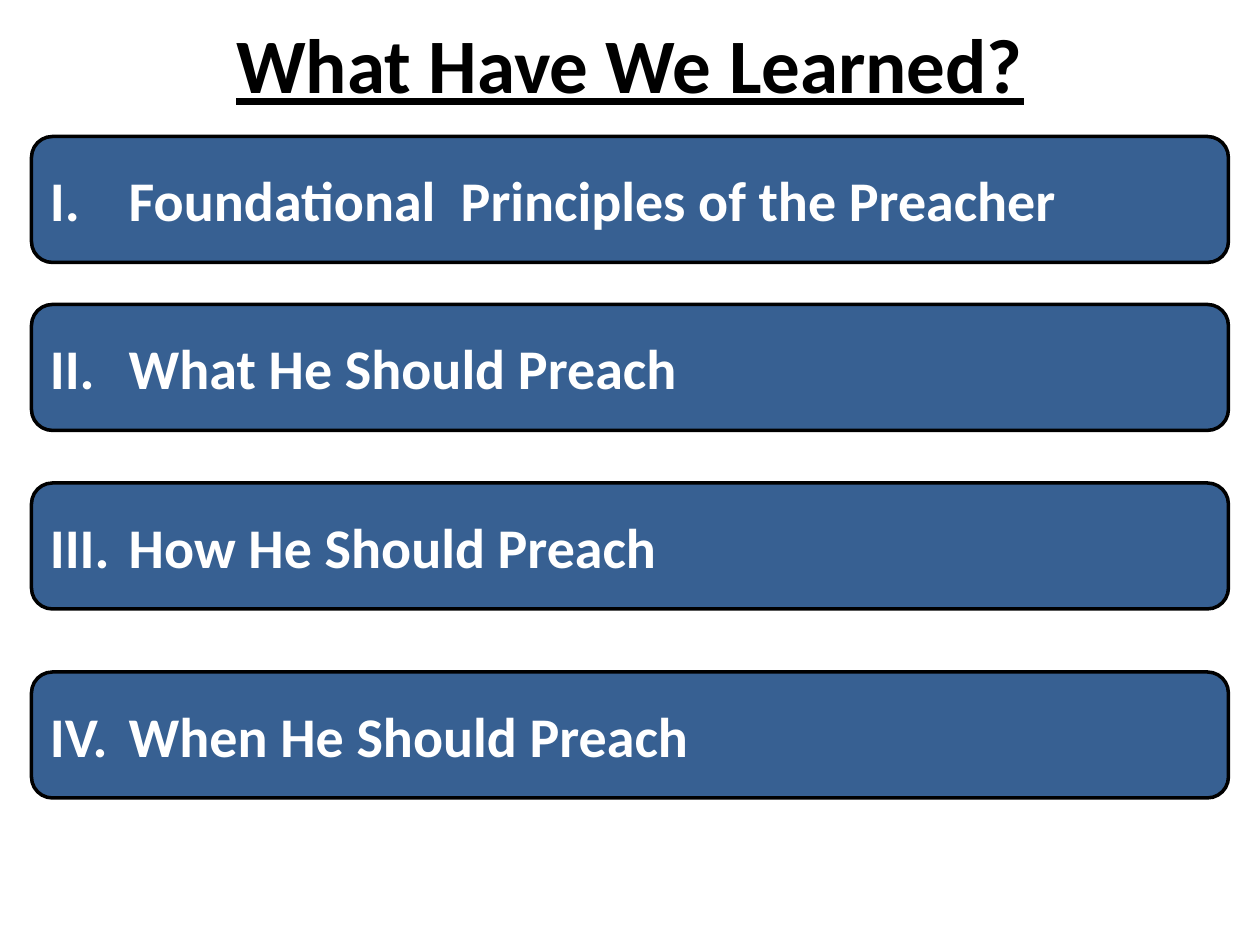
import pptx
import pptx.util
import pptx.dml.color
import pptx.enum.shapes
import pptx.enum.text
import pptx.oxml.ns
import lxml.etree
from pptx.util import Pt


def color(hex_text):
    return pptx.dml.color.RGBColor.from_string(hex_text)


def number_roman(para, start, indent):
    """Number a paragraph with Roman capitals and a hanging indent."""
    properties = para._p.get_or_add_pPr()
    properties.set("marL", str(indent))
    properties.set("indent", str(-indent))
    bullet = lxml.etree.SubElement(properties, pptx.oxml.ns.qn("a:buAutoNum"))
    bullet.set("type", "romanUcPeriod")
    bullet.set("startAt", str(start))


deck = pptx.Presentation()
deck.slide_width, deck.slide_height = Pt(720), Pt(540)
page = deck.slides.add_slide(deck.slide_layouts[5])
page.background.fill.solid()
page.background.fill.fore_color.rgb = color("FFFFFF")

# Title
title = page.shapes.title
title.left, title.top, title.width, title.height = Pt(36), Pt(0), Pt(648), Pt(72)
title.text_frame.text = "What Have We Learned?"
title.text_frame.vertical_anchor = pptx.enum.text.MSO_ANCHOR.MIDDLE
para = title.text_frame.paragraphs[0]
para.alignment = pptx.enum.text.PP_ALIGN.CENTER
para.font.name = "Calibri"
para.font.size = Pt(44)
para.font.bold = True
para.font.underline = True
para.font.color.rgb = color("000000")

# Numbered bars: top edge and heading
lessons = [
    (78, "Foundational  Principles of the Preacher"),
    (174, "What He Should Preach"),
    (276, "How He Should Preach"),
    (384, "When He Should Preach"),
]
for number, (top, heading) in enumerate(lessons, start=1):
    bar = page.shapes.add_shape(
        pptx.enum.shapes.MSO_SHAPE.ROUNDED_RECTANGLE,
        Pt(18), Pt(top), Pt(684), Pt(72))
    bar.shadow.inherit = False
    bar.fill.solid()
    bar.fill.fore_color.rgb = color("376092")
    bar.line.color.rgb = color("000000")
    bar.line.width = Pt(2)
    bar.text_frame.text = heading
    bar.text_frame.vertical_anchor = pptx.enum.text.MSO_ANCHOR.MIDDLE
    para = bar.text_frame.paragraphs[0]
    para.alignment = pptx.enum.text.PP_ALIGN.LEFT
    number_roman(para, number, Pt(45))
    para.font.name = "Calibri"
    para.font.size = Pt(32)
    para.font.bold = True
    para.font.color.rgb = color("FFFFFF")

deck.save("out.pptx")
